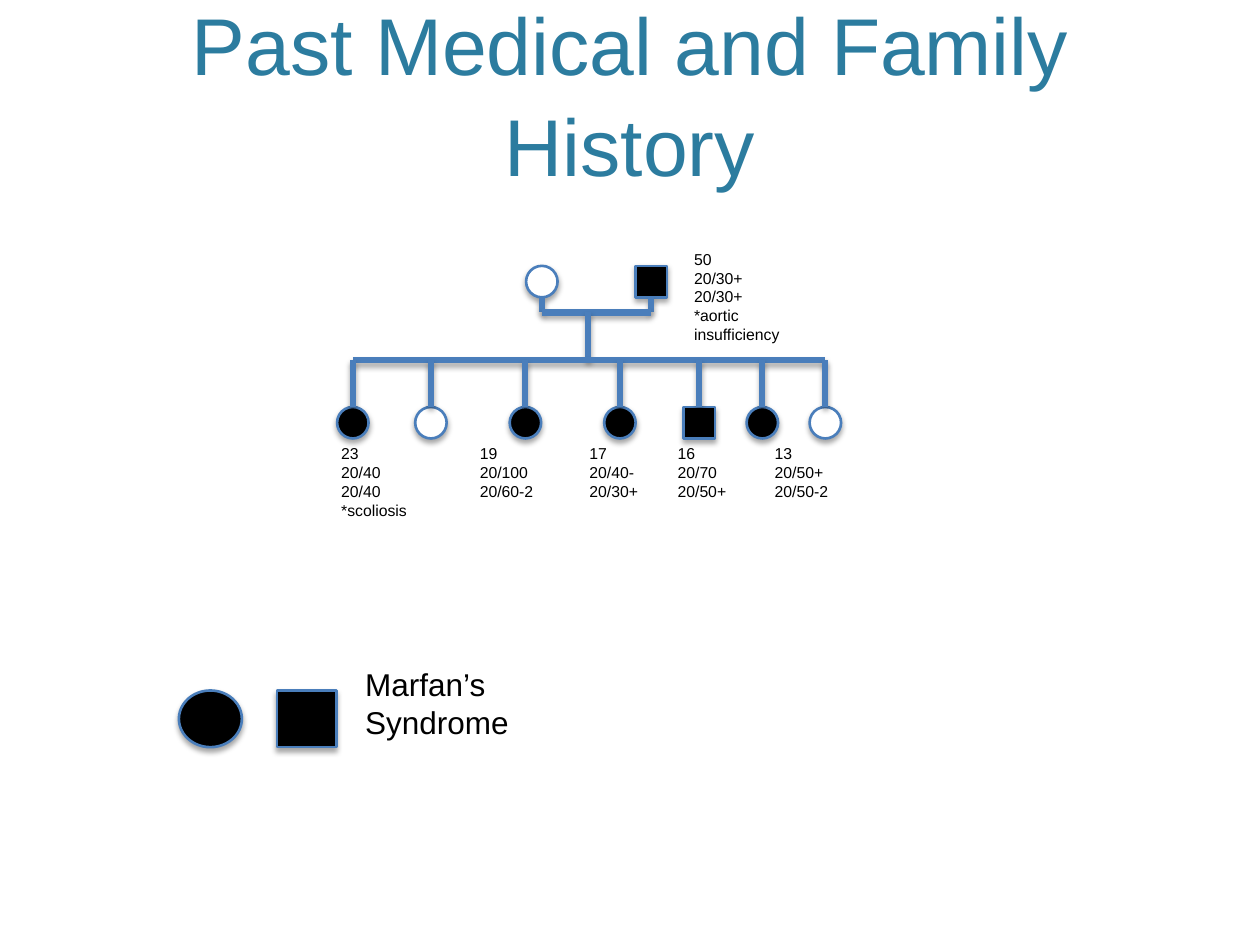
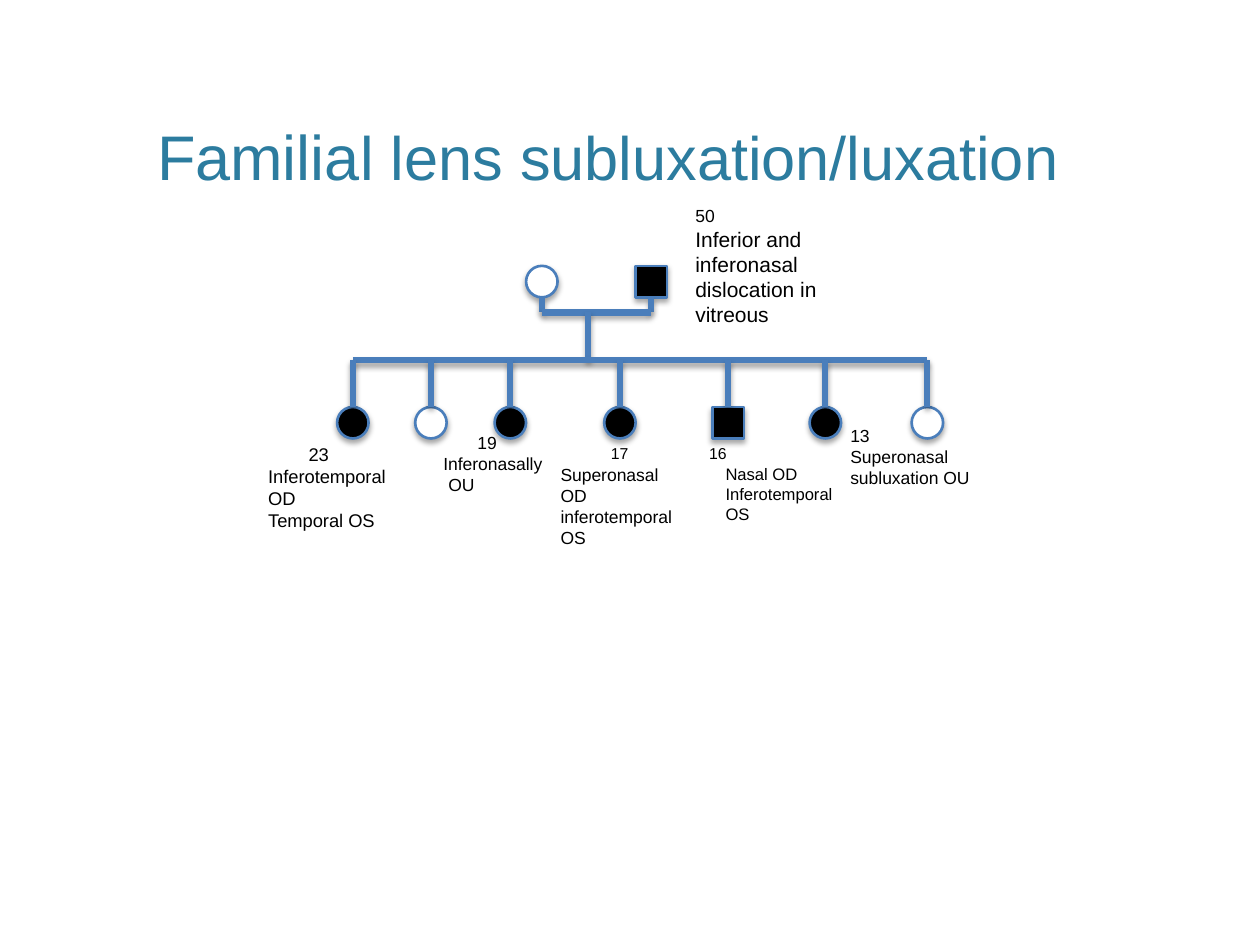
from dataclasses import dataclass
from itertools import zip_longest

from lxml.etree import SubElement
from pptx import Presentation
from pptx.dml.color import RGBColor
from pptx.enum.shapes import MSO_CONNECTOR, MSO_SHAPE
from pptx.enum.text import MSO_ANCHOR, MSO_AUTO_SIZE, PP_ALIGN
from pptx.oxml.ns import qn
from pptx.shapes.autoshape import Shape
from pptx.shapes.connector import Connector
from pptx.slide import Slide
from pptx.text.text import _Paragraph as Paragraph
from pptx.util import Inches, Pt

FONT = "Arial"
TITLE_COLOR = "2C7C9F"
TEXT_COLOR = "000000"
LINE_COLOR = "4A7EBB"
AFFECTED = "000000"
UNAFFECTED = "FFFFFF"
CIRCLE = MSO_SHAPE.OVAL
SQUARE = MSO_SHAPE.RECTANGLE
TOP, BOTTOM = 0, 2

SYMBOL_SIZE = 0.25
PARENT_TOP = 2.11
MOTHER_X, FATHER_X, DESCENT_X = 4.3, 5.17, 4.67
MARRIAGE_Y, SIBLING_LINE_Y, SIBLING_TOP = 2.48, 2.86, 3.23


@dataclass(frozen=True)
class Box:
    """A position and size in inches."""

    left: float
    top: float
    width: float
    height: float


@dataclass(frozen=True)
class Person:
    """A family member, centred on x."""

    x: float
    form: MSO_SHAPE = CIRCLE
    fill: str = AFFECTED


@dataclass(frozen=True)
class Note:
    """A text label whose first line may differ in size."""

    box: Box
    lines: tuple[str, ...]
    size: float = 9
    first_size: float | None = None
    indents: tuple[float, ...] = ()


@dataclass(frozen=True)
class Title:
    """A title made of (text, size) runs."""

    box: Box
    runs: tuple[tuple[str, float], ...]
    line_spacing: float = 1.0


@dataclass(frozen=True)
class Pedigree:
    """Everything that one slide shows."""

    title: Title
    siblings: tuple[Person, ...]
    notes: tuple[Note, ...]
    legend: tuple[tuple[MSO_SHAPE, Box], ...] = ()


def siblings_at(*centres: float) -> tuple[Person, ...]:
    """Return the seven siblings at the given centres."""
    kinds = ((CIRCLE, AFFECTED), (CIRCLE, UNAFFECTED), (CIRCLE, AFFECTED),
             (CIRCLE, AFFECTED), (SQUARE, AFFECTED), (CIRCLE, AFFECTED),
             (CIRCLE, UNAFFECTED))
    return tuple(Person(x, *kind) for x, kind in zip(centres, kinds))


HISTORY = Pedigree(
    title=Title(Box(0.6, 0.12, 8.8, 1.46),
                (("Past Medical and Family History", 46),), 1.05),
    siblings=siblings_at(2.8, 3.42, 4.17, 4.92, 5.55, 6.05, 6.55),
    notes=(
        Note(Box(2.61, 3.47, 0.93, 0.7), ("23", "20/40", "20/40", "*scoliosis")),
        Note(Box(3.71, 3.47, 0.96, 0.55), ("19", "20/100 20/60-2")),
        Note(Box(4.58, 3.47, 0.68, 0.55), ("17", "20/40-", "20/30+")),
        Note(Box(5.41, 1.93, 1.25, 0.85),
             ("50", "20/30+", "20/30+", "*aortic insufficiency")),
        Note(Box(5.28, 3.47, 0.76, 0.55), ("16", "20/70", "20/50+")),
        Note(Box(6.05, 3.47, 0.74, 0.55), ("13", "20/50+", "20/50-2")),
        Note(Box(2.8, 5.23, 1.62, 0.7), ("Marfan’s Syndrome",), 18),
    ),
    legend=((CIRCLE, Box(1.42, 5.48, 0.5, 0.45)),
            (SQUARE, Box(2.2, 5.48, 0.47, 0.45))),
)

LENSES = Pedigree(
    title=Title(Box(0.25, 0.12, 9.15, 1.46),
                (("Familia", 36), ("l lens subluxation/luxation", 35))),
    siblings=siblings_at(2.8, 3.42, 4.05, 4.92, 5.78, 6.55, 7.36),
    notes=(
        Note(Box(2.03, 3.47, 1.28, 0.81),
             ("23", "Inferotemporal OD", "Temporal OS"), 10.5, indents=(0.32,)),
        Note(Box(3.42, 3.38, 1.49, 0.63),
             ("19", "Inferonasally", "OU"), 10, indents=(0.27, 0, 0.04)),
        Note(Box(4.58, 3.47, 0.68, 0.25), ("17",), indents=(0.17,)),
        Note(Box(5.42, 1.58, 1.25, 1.08),
             ("50", "Inferior and inferonasal dislocation in vitreous"), 12, 10),
        Note(Box(5.53, 3.47, 0.76, 0.25), ("16",)),
        Note(Box(6.65, 3.32, 1.18, 0.81), ("13", "Superonasal subluxation OU"), 10),
        Note(Box(5.66, 3.63, 1.25, 0.58), ("Nasal OD", "Inferotemporal OS"), 9.5),
        Note(Box(4.35, 3.63, 1.12, 0.77),
             ("Superonasal OD inferotemporal OS",), 10),
    ),
)


def rgb(color: str) -> RGBColor:
    """Turn a hex string into a colour."""
    return RGBColor.from_string(color)


def add_run(paragraph: Paragraph, text: str, *, size: float,
            color: str = TEXT_COLOR) -> None:
    """Append formatted text to a paragraph."""
    run = paragraph.add_run()
    run.text = text
    run.font.name = FONT
    run.font.size = Pt(size)
    run.font.color.rgb = rgb(color)


def add_shadow(shape: Shape | Connector) -> None:
    """Give a shape or connector a soft shadow below it."""
    effects = SubElement(shape._element.spPr, qn("a:effectLst"))
    shadow = SubElement(effects, qn("a:outerShdw"), blurRad=str(Pt(3)),
                        dist=str(Pt(2.1)), dir="5400000", rotWithShape="0")
    color = SubElement(shadow, qn("a:srgbClr"), val="000000")
    SubElement(color, qn("a:alpha"), val="35000")


def add_symbol(slide: Slide, form: MSO_SHAPE, box: Box, fill: str) -> Shape:
    """Draw a pedigree circle or square."""
    shape = slide.shapes.add_shape(form, Inches(box.left), Inches(box.top),
                                   Inches(box.width), Inches(box.height))
    shape.fill.solid()
    shape.fill.fore_color.rgb = rgb(fill)
    shape.line.color.rgb = rgb(LINE_COLOR)
    shape.line.width = Pt(1.5)
    add_shadow(shape)
    return shape


def add_person(slide: Slide, person: Person, top: float) -> Shape:
    """Draw a family member with the symbol's top edge at top."""
    box = Box(person.x - SYMBOL_SIZE / 2, top, SYMBOL_SIZE, SYMBOL_SIZE)
    return add_symbol(slide, person.form, box, person.fill)


def add_line(slide: Slide, x1: float, y1: float, x2: float, y2: float) -> Connector:
    """Draw a straight family line."""
    connector = slide.shapes.add_connector(
        MSO_CONNECTOR.STRAIGHT, Inches(x1), Inches(y1), Inches(x2), Inches(y2))
    connector.line.color.rgb = rgb(LINE_COLOR)
    connector.line.width = Pt(3.5)
    add_shadow(connector)
    return connector


def add_family(slide: Slide, siblings: tuple[Person, ...]) -> None:
    """Draw the parents, the siblings and the lines between them."""
    add_person(slide, Person(MOTHER_X, fill=UNAFFECTED), PARENT_TOP)
    father = add_person(slide, Person(FATHER_X, SQUARE), PARENT_TOP)
    symbols = [add_person(slide, person, SIBLING_TOP) for person in siblings]

    parent_bottom = PARENT_TOP + SYMBOL_SIZE
    add_line(slide, MOTHER_X, parent_bottom, MOTHER_X, MARRIAGE_Y)
    father_line = add_line(slide, FATHER_X, parent_bottom, FATHER_X, MARRIAGE_Y)
    father_line.begin_connect(father, BOTTOM)
    add_line(slide, MOTHER_X, MARRIAGE_Y, FATHER_X, MARRIAGE_Y)
    add_line(slide, DESCENT_X, MARRIAGE_Y, DESCENT_X, SIBLING_LINE_Y)
    add_line(slide, siblings[0].x, SIBLING_LINE_Y, siblings[-1].x, SIBLING_LINE_Y)
    for person, symbol in zip(siblings, symbols):
        drop = add_line(slide, person.x, SIBLING_LINE_Y, person.x, SIBLING_TOP)
        drop.end_connect(symbol, TOP)


def add_note(slide: Slide, note: Note) -> None:
    """Write a label with one paragraph per line."""
    box = note.box
    text_box = slide.shapes.add_textbox(Inches(box.left), Inches(box.top),
                                        Inches(box.width), Inches(box.height))
    frame = text_box.text_frame
    frame.word_wrap = True
    frame.auto_size = MSO_AUTO_SIZE.SHAPE_TO_FIT_TEXT
    for index, (line, indent) in enumerate(
            zip_longest(note.lines, note.indents, fillvalue=0)):
        paragraph = frame.add_paragraph() if index else frame.paragraphs[0]
        if indent:
            paragraph._p.get_or_add_pPr().set("marL", str(Inches(indent)))
        first_size = note.first_size or note.size
        add_run(paragraph, line, size=note.size if index else first_size)


def set_title(slide: Slide, title: Title) -> None:
    """Place and write the slide title."""
    shape = slide.shapes.title
    shape.left, shape.top = Inches(title.box.left), Inches(title.box.top)
    shape.width, shape.height = Inches(title.box.width), Inches(title.box.height)
    frame = shape.text_frame
    frame.word_wrap = True
    frame.auto_size = MSO_AUTO_SIZE.NONE
    frame.vertical_anchor = MSO_ANCHOR.BOTTOM
    paragraph = frame.paragraphs[0]
    paragraph.alignment = PP_ALIGN.CENTER
    paragraph.line_spacing = title.line_spacing
    for text, size in title.runs:
        add_run(paragraph, text, size=size, color=TITLE_COLOR)


def main() -> None:
    """Build the two pedigree slides."""
    presentation = Presentation()
    presentation.slide_width = Inches(10)
    presentation.slide_height = Inches(7.5)
    title_only = presentation.slide_layouts.get_by_name("Title Only")
    for pedigree in (HISTORY, LENSES):
        slide = presentation.slides.add_slide(title_only)
        set_title(slide, pedigree.title)
        add_family(slide, pedigree.siblings)
        for form, box in pedigree.legend:
            add_symbol(slide, form, box, AFFECTED)
        for note in pedigree.notes:
            add_note(slide, note)
    presentation.save("out.pptx")


if __name__ == "__main__":
    main()
